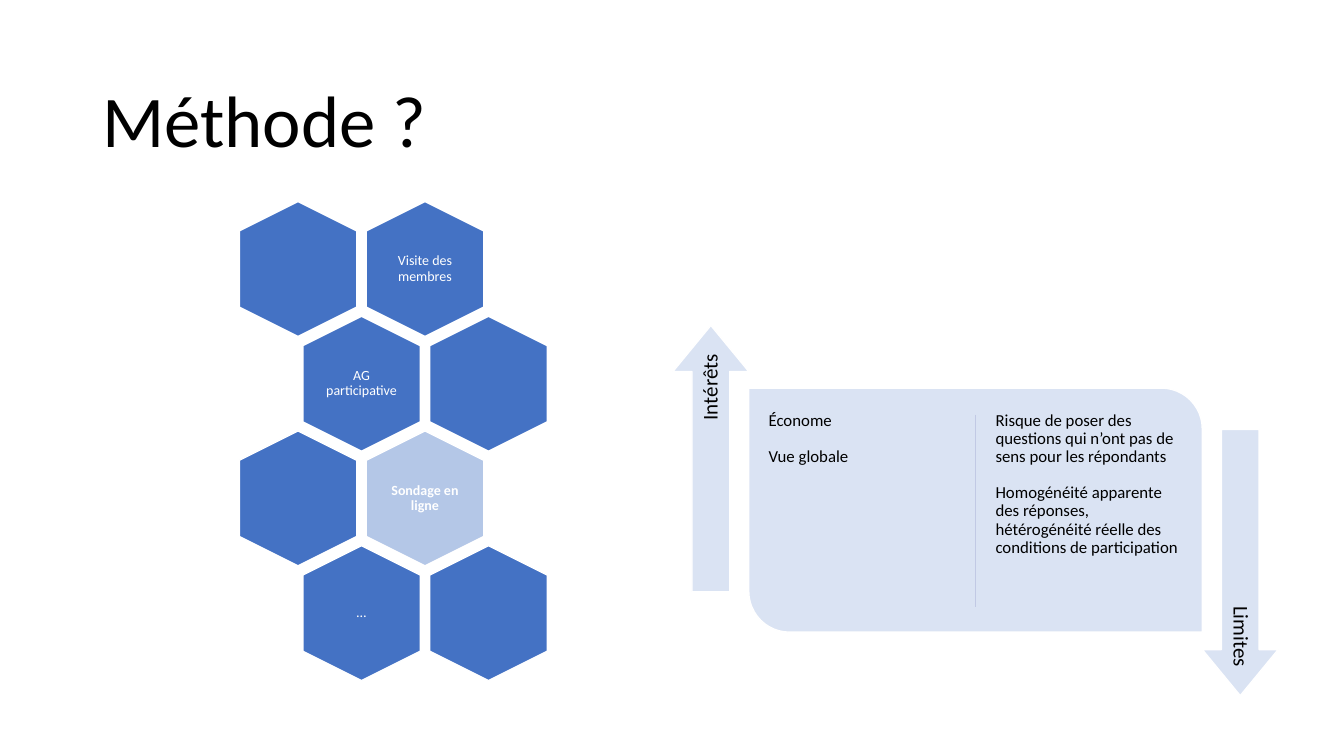
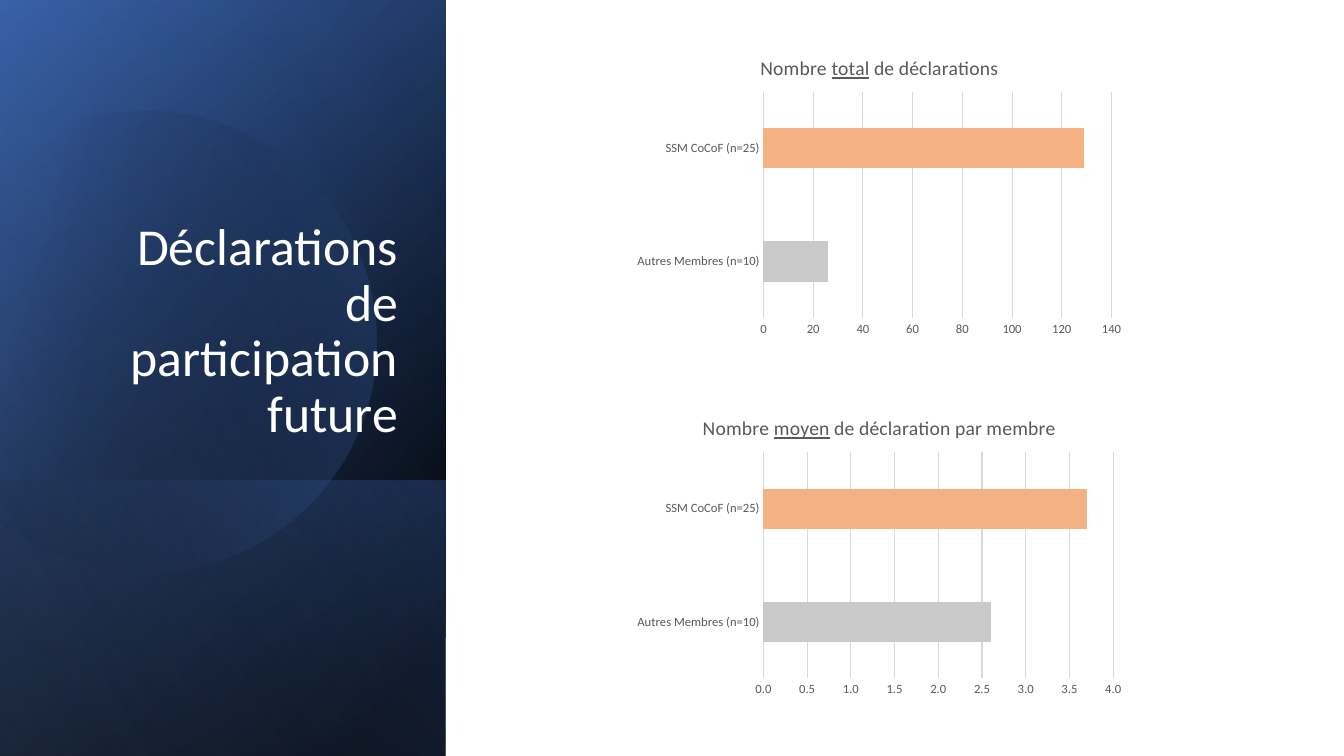
from dataclasses import dataclass
from itertools import pairwise
from math import cos, radians, sin, tan

from pptx import Presentation
from pptx import util as u
from pptx.chart import data
from pptx.dml import color
from pptx.enum import chart as charts
from pptx.enum import shapes, text
from pptx.oxml import parse_xml
from pptx.oxml import ns


@dataclass(frozen=True)
class Theme:
    font: str = "Calibri"
    black: str = "000000"
    white: str = "FFFFFF"
    grey: str = "595959"
    grid: str = "D9D9D9"
    divider: str = "C1C9E4"
    blue: str = "4472C4"
    dark_blue: str = "2F5597"
    mid_blue: str = "8FAADC"
    soft_blue: str = "B4C7E7"
    pale_blue: str = "DAE3F3"
    bars: tuple = ("C9C9C9", "F4B183")
    title: int = 52
    side_title: int = 37
    arrow: int = 15
    chart_title: int = 14
    body: int = 12
    small: int = 10
    axis: int = 9


theme = Theme()
rgb = color.RGBColor.from_string
align = text.PP_ALIGN
anchor = text.MSO_ANCHOR


def paint(shape, fill, angle=None):
    shape.shadow.inherit = False
    shape.fill.solid()
    if angle is None:
        shape.fill.fore_color.rgb = rgb(fill)
        shape.line.color.rgb = rgb(theme.white)
        shape.line.width = u.Pt(1)
        return
    shape.line.fill.background()
    stops = "".join(
        f'<a:gs pos="{position * 1000}"><a:srgbClr val="{value}">'
        f'<a:alpha val="{alpha * 1000}"/></a:srgbClr></a:gs>'
        for position, value, alpha in fill
    )
    properties = shape._element.spPr
    properties.replace(
        properties.find(ns.qn("a:solidFill")),
        parse_xml(
            f'<a:gradFill {ns.nsdecls("a")} rotWithShape="1"><a:gsLst>{stops}</a:gsLst>'
            f'<a:lin ang="{angle * 60000}" scaled="0"/></a:gradFill>'
        ),
    )


def write(shape, content, size, ink, alignment, vertical, inset, bold=False):
    frame = shape.text_frame
    frame.text = content
    frame.word_wrap = True
    frame.auto_size = text.MSO_AUTO_SIZE.NONE
    frame.vertical_anchor = vertical
    frame.margin_left = frame.margin_right = u.Cm(inset)
    frame.margin_top = frame.margin_bottom = u.Cm(min(inset, 0.15))
    for paragraph in frame.paragraphs:
        paragraph.alignment = alignment
        paragraph.line_spacing = 0.9
        paragraph.space_before = u.Pt(0)
        for run in paragraph.runs:
            run.font.name = theme.font
            run.font.size = u.Pt(size)
            run.font.bold = bold
            run.font.color.rgb = rgb(ink)


presentation = Presentation()
presentation.slide_width = u.Cm(33.87)
presentation.slide_height = u.Cm(19.05)
title_only = presentation.slide_layouts[5]

titles = [
    ("Méthode ?", (2.33, 1.55, 29.21, 3.15), theme.title, theme.black, align.LEFT, anchor.MIDDLE),
    ("Déclarations de participation future", (1.62, 4.69, 8.66, 6.65),
     theme.side_title, theme.white, align.RIGHT, anchor.BOTTOM),
]
slides = []
for content, box, size, ink, alignment, vertical in titles:
    slide = presentation.slides.add_slide(title_only)
    title = slide.shapes.title
    title.left, title.top, title.width, title.height = map(u.Cm, box)
    write(title, content, size, ink, alignment, vertical, 0.25)
    slides.append(slide)
method_slide, future_slide = slides

hexagon_rows = [
    ("", "Visite des membres"),
    ("AG participative", ""),
    ("", "Sondage en ligne"),
    ("…", ""),
]
for row, labels in enumerate(hexagon_rows):
    for column, label in enumerate(labels):
        center_x = 7.51 + 3.2 * column + 1.6 * (row % 2)
        center_y = 6.78 + 2.89 * row
        current = label == "Sondage en ligne"
        hexagon = method_slide.shapes.add_shape(
            shapes.MSO_SHAPE.HEXAGON,
            u.Cm(center_x - 1.7), u.Cm(center_y - 1.48), u.Cm(3.4), u.Cm(2.96),
        )
        hexagon.rotation = 90
        hexagon.adjustments[0] = 0.25
        paint(hexagon, theme.soft_blue if current else theme.blue)
        if label:
            caption = method_slide.shapes.add_textbox(
                u.Cm(center_x - 1.02), u.Cm(center_y - 1.17), u.Cm(2.04), u.Cm(2.34)
            )
            write(caption, label, theme.small, theme.white, align.CENTER,
                  anchor.MIDDLE, 0.1, current)

card = method_slide.shapes.add_shape(
    shapes.MSO_SHAPE.ROUND_2_DIAG_RECTANGLE, u.Cm(18.87), u.Cm(9.78), u.Cm(11.43), u.Cm(6.15)
)
card.adjustments[0], card.adjustments[1] = 0, 0.167
paint(card, theme.pale_blue)

divider = method_slide.shapes.add_connector(
    shapes.MSO_CONNECTOR.STRAIGHT, u.Cm(24.59), u.Cm(10.45), u.Cm(24.59), u.Cm(15.3)
)
divider.line.color.rgb = rgb(theme.divider)
divider.line.width = u.Pt(1)
divider._element.spPr.append(parse_xml(f'<a:effectLst {ns.nsdecls("a")}/>'))

arguments = [
    (19.24, "Économe\nVue globale"),
    (24.96, "Risque de poser des questions qui n’ont pas de sens pour les répondants\n"
            "Homogénéité apparente des réponses, hétérogénéité réelle des conditions de participation"),
]
for left, content in arguments:
    column = method_slide.shapes.add_textbox(u.Cm(left), u.Cm(10.25), u.Cm(4.95), u.Cm(5.21))
    write(column, content, theme.body, theme.black, align.LEFT, anchor.TOP, 0.13)
    column.text_frame.paragraphs[0].space_after = u.Pt(12.8)

arrows = [("Intérêts", 14.56, 10.6, 270), ("Limites", 27.9, 13.22, 90)]
for label, left, top, rotation in arrows:
    arrow = method_slide.shapes.add_shape(
        shapes.MSO_SHAPE.RIGHT_ARROW, u.Cm(left), u.Cm(top), u.Cm(6.71), u.Cm(1.91)
    )
    arrow.rotation = rotation
    arrow.adjustments[0], arrow.adjustments[1] = 0.498, 0.607
    paint(arrow, theme.pale_blue)
    write(arrow, label, theme.arrow, theme.black, align.RIGHT, anchor.MIDDLE, 0.15)

full_band = (-3.91, 3.91, 19.05, 11.23)
lower_band = (2.13, 9.98, 6.96, 11.23)
bands = [
    (full_band, [(8, theme.black, 100), (100, theme.dark_blue, 100)], 50),
    (full_band, [(0, theme.black, 0), (99, theme.blue, 46)], 30),
    (lower_band, [(2, theme.blue, 29), (100, theme.black, 30)], 130),
    (full_band, [(0, theme.black, 0), (99, theme.mid_blue, 11)], 120),
]
for index, (box, stops, angle) in enumerate(bands):
    if index == 3:
        turns = [radians(turn) for turn in (-118, -90, 0, 90, 150)]
        center_x, center_y, radius = u.Cm(3.64), u.Cm(8.5), u.Cm(5.82)
        corners = [(center_x + radius * cos(turn), center_y + radius * sin(turn)) for turn in turns]
        builder = future_slide.shapes.build_freeform(*corners[0])
        builder.add_line_segments(corners[1:])
        disc = builder.convert_to_shape()
        sides = list(disc._element.spPr.iter(ns.qn("a:lnTo")))
        for side, (start, end) in zip(sides, pairwise(turns)):
            handle = 4 / 3 * tan((end - start) / 4)
            curve = [
                (cos(start) - handle * sin(start), sin(start) + handle * cos(start)),
                (cos(end) + handle * sin(end), sin(end) - handle * cos(end)),
                (cos(end), sin(end)),
            ]
            points = "".join(
                f'<a:pt x="{round(center_x + radius * x - disc.left)}" '
                f'y="{round(center_y + radius * y - disc.top)}"/>'
                for x, y in curve
            )
            side.getparent().replace(
                side, parse_xml(f'<a:cubicBezTo {ns.nsdecls("a")}>{points}</a:cubicBezTo>')
            )
        disc.rotation = 343.9
        paint(disc, [(29, theme.black, 0), (100, theme.blue, 43)], 30)
    band = future_slide.shapes.add_shape(shapes.MSO_SHAPE.RECTANGLE, *map(u.Cm, box))
    band.rotation = 90
    band._element.spPr.get_or_add_xfrm().set("flipH", "1")
    paint(band, stops, angle)
future_slide.shapes._spTree.append(future_slide.shapes.title._element)

bar_charts = [
    (1.01, ("Nombre ", "total", " de déclarations"), (26, 129), "General"),
    (10.09, ("Nombre ", "moyen", " de déclaration par membre"), (2.6, 3.7), "0.0"),
]
for top, title_parts, values, number_format in bar_charts:
    chart_data = data.CategoryChartData()
    chart_data.categories = ["Autres Membres (n=10)", "SSM CoCoF (n=25)"]
    chart_data.add_series("Series 1", values)
    chart = future_slide.shapes.add_chart(
        charts.XL_CHART_TYPE.BAR_CLUSTERED,
        u.Cm(15.81), u.Cm(top), u.Cm(12.7), u.Cm(7.63), chart_data,
    ).chart
    chart.font.name = theme.font
    chart.font.size = u.Pt(theme.small)
    chart.has_legend = False
    chart.has_title = True
    heading = chart.chart_title.text_frame.paragraphs[0]
    for position, part in enumerate(title_parts):
        run = heading.add_run()
        run.text = part
        run.font.name = theme.font
        run.font.size = u.Pt(theme.chart_title)
        run.font.bold = False
        run.font.underline = position == 1
        run.font.color.rgb = rgb(theme.grey)

    for axis in (chart.category_axis, chart.value_axis):
        axis.major_tick_mark = axis.minor_tick_mark = charts.XL_TICK_MARK.NONE
        axis.tick_labels.font.name = theme.font
        axis.tick_labels.font.size = u.Pt(theme.axis)
        axis.tick_labels.font.color.rgb = rgb(theme.grey)
    chart.value_axis.tick_labels.number_format = number_format
    chart.value_axis.tick_labels.number_format_is_linked = False
    chart.value_axis.format.line.fill.background()
    chart.value_axis.has_major_gridlines = True
    for line in (chart.category_axis.format.line, chart.value_axis.major_gridlines.format.line):
        line.color.rgb = rgb(theme.grid)
        line.width = u.Pt(0.75)

    plot = chart.plots[0]
    plot.gap_width = 182
    plot.vary_by_categories = False
    series = plot.series[0]
    series.format.fill.solid()
    series.format.fill.fore_color.rgb = rgb(theme.blue)
    for position, bar_color in enumerate(theme.bars):
        fill = series.points[position].format.fill
        fill.solid()
        fill.fore_color.rgb = rgb(bar_color)

presentation.save("out.pptx")
